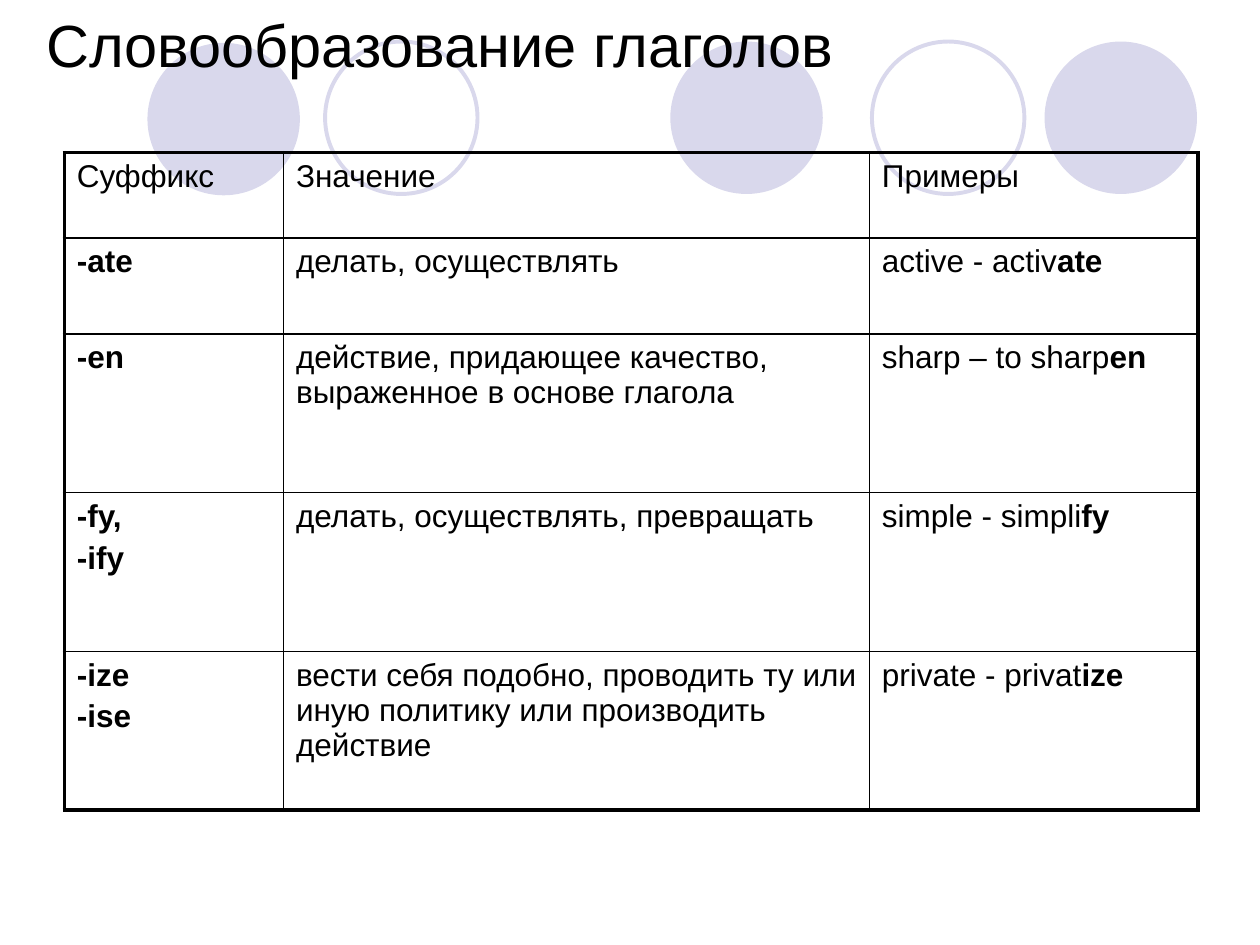
from dataclasses import dataclass

from lxml.etree import SubElement
from pptx import Presentation
from pptx.dml.color import RGBColor
from pptx.enum.shapes import MSO_SHAPE
from pptx.enum.text import MSO_ANCHOR, PP_ALIGN
from pptx.oxml.ns import qn
from pptx.util import Inches, Pt

COLORS = {"ink": "000000", "lilac": "D9D8EC", "paper": "FFFFFF"}
FONT = "Arial"
OUTER, INNER = 2.25, 1


@dataclass
class Circle:
    left: float
    top: float
    filled: bool


@dataclass
class Entry:
    suffixes: list[str]
    meaning: str
    stem: str
    ending: str


CIRCLES = [
    Circle(5.32, 0.33, True),
    Circle(8.29, 0.33, True),
    Circle(1.17, 0.34, True),
    Circle(6.92, 0.33, False),
    Circle(2.58, 0.33, False),
]
CIRCLE_SIZE = 1.21

HEADINGS = ["Суффикс", "Значение", "Примеры"]
ENTRIES = [
    Entry(["-ate"], "делать, осуществлять", "active - activ", "ate"),
    Entry(["-en"], "действие, придающее качество, выраженное в основе глагола",
          "sharp – to sharp", "en"),
    Entry(["-fy,", "-ify"], "делать, осуществлять, превращать", "simple - simpli", "fy"),
    Entry(["-ize", "-ise"],
          "вести себя подобно, проводить ту или иную политику или производить действие",
          "private - privat", "ize"),
]
COLUMN_WIDTHS = [1.74, 4.65, 2.61]
ROW_HEIGHTS = [0.68, 0.76, 1.26, 1.26, 1.26]


def color(name: str) -> RGBColor:
    return RGBColor.from_string(COLORS[name])


def style_span(span, size: float, bold: bool = False) -> None:
    span.font.name = FONT
    span.font.size = Pt(size)
    span.font.bold = bold
    span.font.color.rgb = color("ink")


def draw_circle(page, circle: Circle) -> None:
    shape = page.shapes.add_shape(
        MSO_SHAPE.OVAL, Inches(circle.left), Inches(circle.top),
        Inches(CIRCLE_SIZE), Inches(CIRCLE_SIZE))
    shape.shadow.inherit = False
    if circle.filled:
        shape.fill.solid()
        shape.fill.fore_color.rgb = color("lilac")
        shape.line.fill.background()
    else:
        shape.fill.background()
        shape.line.color.rgb = color("lilac")
        shape.line.width = Pt(2.25)


def set_title(page, text: str) -> None:
    title = page.shapes.title
    title.left, title.top = Inches(0.27), Inches(0)
    title.width, title.height = Inches(9), Inches(0.69)
    frame = title.text_frame
    frame.text = text
    frame.vertical_anchor = MSO_ANCHOR.MIDDLE
    para = frame.paragraphs[0]
    para.alignment = PP_ALIGN.LEFT
    style_span(para.runs[0], 34)
    # Bring the title in front of the circles
    title.element.getparent().append(title.element)


def set_borders(cell, widths: dict[str, float]) -> None:
    properties = cell._tc.get_or_add_tcPr()
    for side, width in widths.items():
        line = SubElement(properties, qn(f"a:ln{side}"), w=str(Pt(width)))
        fill = SubElement(line, qn("a:solidFill"))
        SubElement(fill, qn("a:srgbClr"), val=COLORS["ink"])


def write_cell(cell, paragraphs: list[list[tuple[str, bool]]]) -> None:
    """Fill a cell with paragraphs, each a list of (text, bold) spans."""
    frame = cell.text_frame
    for index, spans in enumerate(paragraphs):
        para = frame.add_paragraph() if index else frame.paragraphs[0]
        para.space_before = Pt(3.6)
        for text, bold in spans:
            span = para.add_run()
            span.text = text
            style_span(span, 18, bold)


def draw_table(page) -> None:
    rows = [[[[(heading, False)]] for heading in HEADINGS]]
    for entry in ENTRIES:
        rows.append([
            [[(suffix, True)] for suffix in entry.suffixes],
            [[(entry.meaning, False)]],
            [[(entry.stem, False), (entry.ending, True)]],
        ])

    table = page.shapes.add_table(
        len(rows), len(HEADINGS), Inches(0.51), Inches(1.21),
        Inches(sum(COLUMN_WIDTHS)), Inches(sum(ROW_HEIGHTS))).table
    table.first_row = table.horz_banding = False
    for column, width in zip(table.columns, COLUMN_WIDTHS):
        column.width = Inches(width)
    for row, height in zip(table.rows, ROW_HEIGHTS):
        row.height = Inches(height)

    last_row, last_column = len(rows) - 1, len(HEADINGS) - 1
    for r, row in enumerate(rows):
        for c, paragraphs in enumerate(row):
            cell = table.cell(r, c)
            write_cell(cell, paragraphs)
            set_borders(cell, {
                "L": OUTER if c == 0 else INNER,
                "R": OUTER if c == last_column else INNER,
                "T": OUTER if r == 0 else INNER,
                "B": OUTER if r == last_row else INNER,
            })
            cell.fill.background()


def main() -> None:
    deck = Presentation()
    deck.slide_width, deck.slide_height = Inches(10), Inches(7.5)
    page = deck.slides.add_slide(deck.slide_layouts.get_by_name("Title Only"))
    page.background.fill.solid()
    page.background.fill.fore_color.rgb = color("paper")
    for circle in CIRCLES:
        draw_circle(page, circle)
    set_title(page, "Словообразование глаголов")
    draw_table(page)
    deck.save("out.pptx")


if __name__ == "__main__":
    main()
